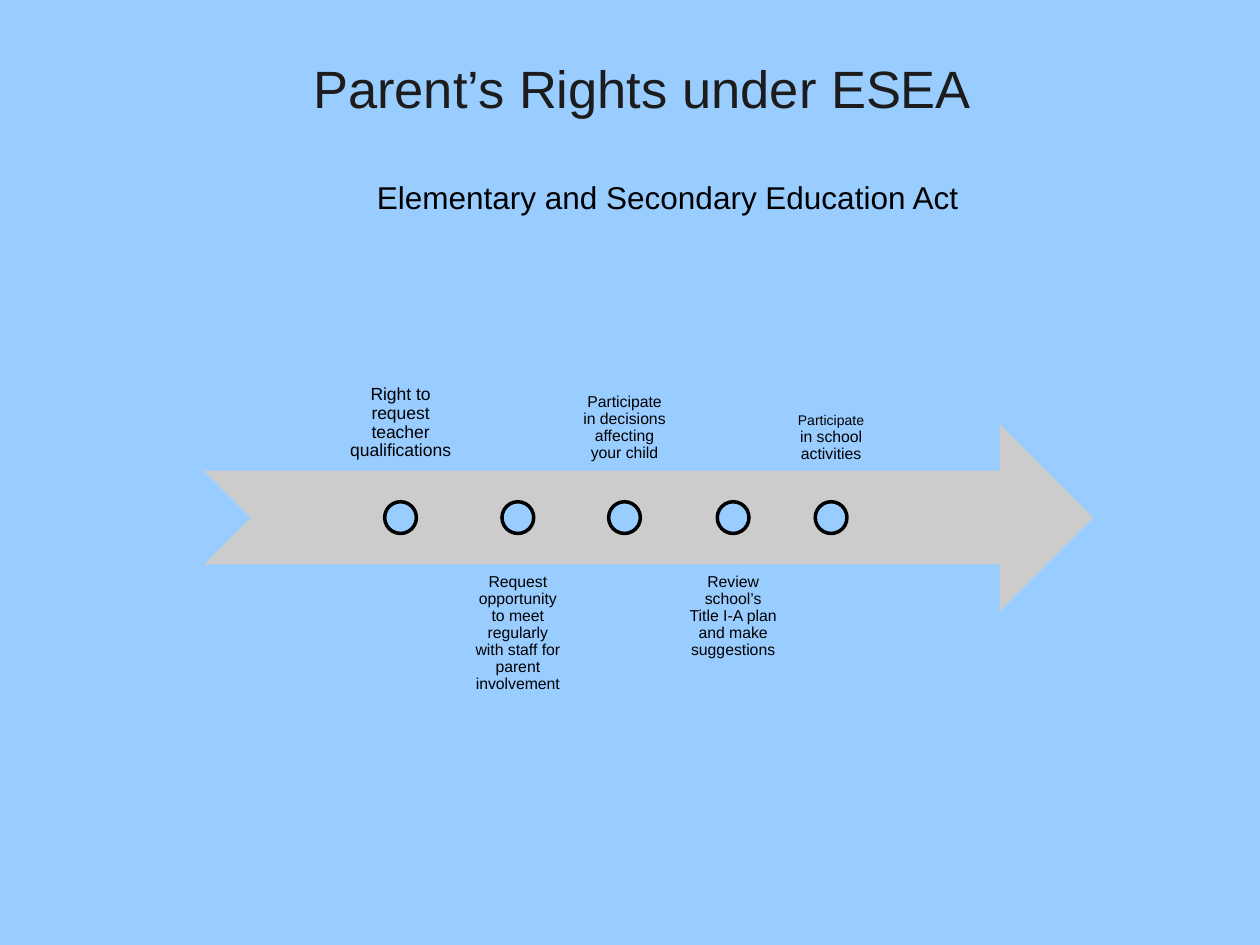
import pptx
import pptx.dml.color
import pptx.enum.shapes
import pptx.enum.text
import pptx.util

Cm = pptx.util.Cm
Pt = pptx.util.Pt
ALIGN = pptx.enum.text.PP_ALIGN
ANCHOR = pptx.enum.text.MSO_ANCHOR
SHAPE = pptx.enum.shapes.MSO_SHAPE

COLORS = {"sky": "99CCFF", "arrow": "CCCCCC", "title": "1C1C1C", "text": "000000"}

# Label runs as (text, size), then width and inset in cm
RIGHTS = [
    ([("Right to request teacher qualifications", 10)], 2.59, 0.2),
    ([("Request opportunity to meet regularly with staff for parent involvement", 9)],
     2.08, 0.18),
    ([("Participate in decisions affecting your child", 9)], 2.16, 0.18),
    ([("Review school’s Title I-A plan and make suggestions", 9)], 2.16, 0.18),
    ([("Participate", 8), (" in school activities", 9)], 1.73, 0.15),
]


def rgb(name):
    return pptx.dml.color.RGBColor.from_string(COLORS[name])


def add_text(slide, box, runs, color="text", align=ALIGN.CENTER,
             anchor=ANCHOR.TOP, insets=(0.25, 0.13), line_spacing=1.0):
    """Place one paragraph of (text, size) runs; box and insets are in cm."""
    frame = slide.shapes.add_textbox(*map(Cm, box)).text_frame
    frame.word_wrap = True
    frame.vertical_anchor = anchor
    frame.margin_left = frame.margin_right = Cm(insets[0])
    frame.margin_top = frame.margin_bottom = Cm(insets[1])
    paragraph = frame.paragraphs[0]
    paragraph.alignment = align
    paragraph.line_spacing = line_spacing
    paragraph.font.name = "Arial"
    paragraph.font.color.rgb = rgb(color)
    for text, size in runs:
        run = paragraph.add_run()
        run.text = text
        run.font.size = Pt(size)


def add_filled_shape(slide, kind, box, fill):
    shape = slide.shapes.add_shape(kind, *map(Cm, box))
    shape.shadow.inherit = False
    shape.fill.solid()
    shape.fill.fore_color.rgb = rgb(fill)
    shape.line.fill.background()
    return shape


def add_heading(slide, left, top):
    add_text(slide, (left, top, 17, 2.34), [("Parent’s Rights under ESEA", 30)],
             color="title", insets=(0.25, 0))
    add_text(slide, (left + 2.9, top + 2.31, 12.32, 1.02),
             [("Elementary and Secondary Education Act", 18)], align=ALIGN.LEFT)


def add_timeline(slide, left, top, width, height):
    # Arrow across the middle, labels alternating above and below it
    band = 0.4 * height
    add_filled_shape(slide, SHAPE.NOTCHED_RIGHT_ARROW,
                     (left, top + 0.3 * height, width, band), "arrow")
    dot, gap = 0.64, 0.03
    label_left = left + 2.67
    for index, (runs, label_width, inset) in enumerate(RIGHTS):
        above = index % 2 == 0
        label_top = top if above else top + height - band
        add_text(slide, (label_left, label_top, label_width, band), runs,
                 anchor=ANCHOR.BOTTOM if above else ANCHOR.TOP,
                 insets=(inset, inset), line_spacing=0.9)
        marker = add_filled_shape(
            slide, SHAPE.OVAL,
            (label_left + (label_width - dot) / 2, top + (height - dot) / 2, dot, dot),
            "sky")
        marker.line.color.rgb = rgb("text")
        marker.line.width = Pt(2)
        label_left += label_width + gap


def main():
    presentation = pptx.Presentation()
    presentation.slide_width = Cm(25.4)
    presentation.slide_height = Cm(19.05)
    slide = presentation.slides.add_slide(presentation.slide_layouts[6])
    slide.background.fill.solid()
    slide.background.fill.fore_color.rgb = rgb("sky")
    add_heading(slide, 4.45, 1.14)
    add_timeline(slide, 4.11, 5.71, 17.93, 9.45)
    presentation.save("out.pptx")


if __name__ == "__main__":
    main()
